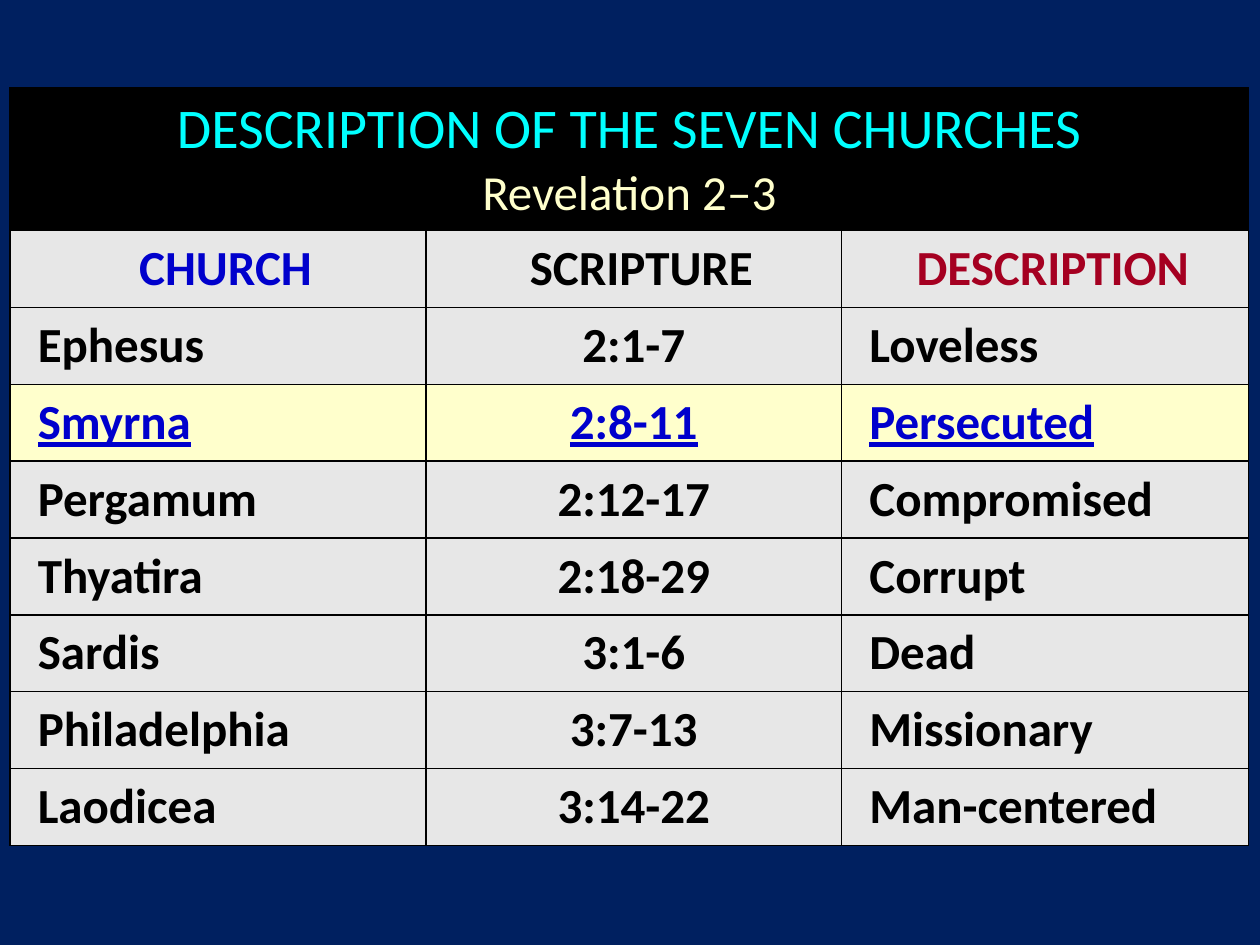
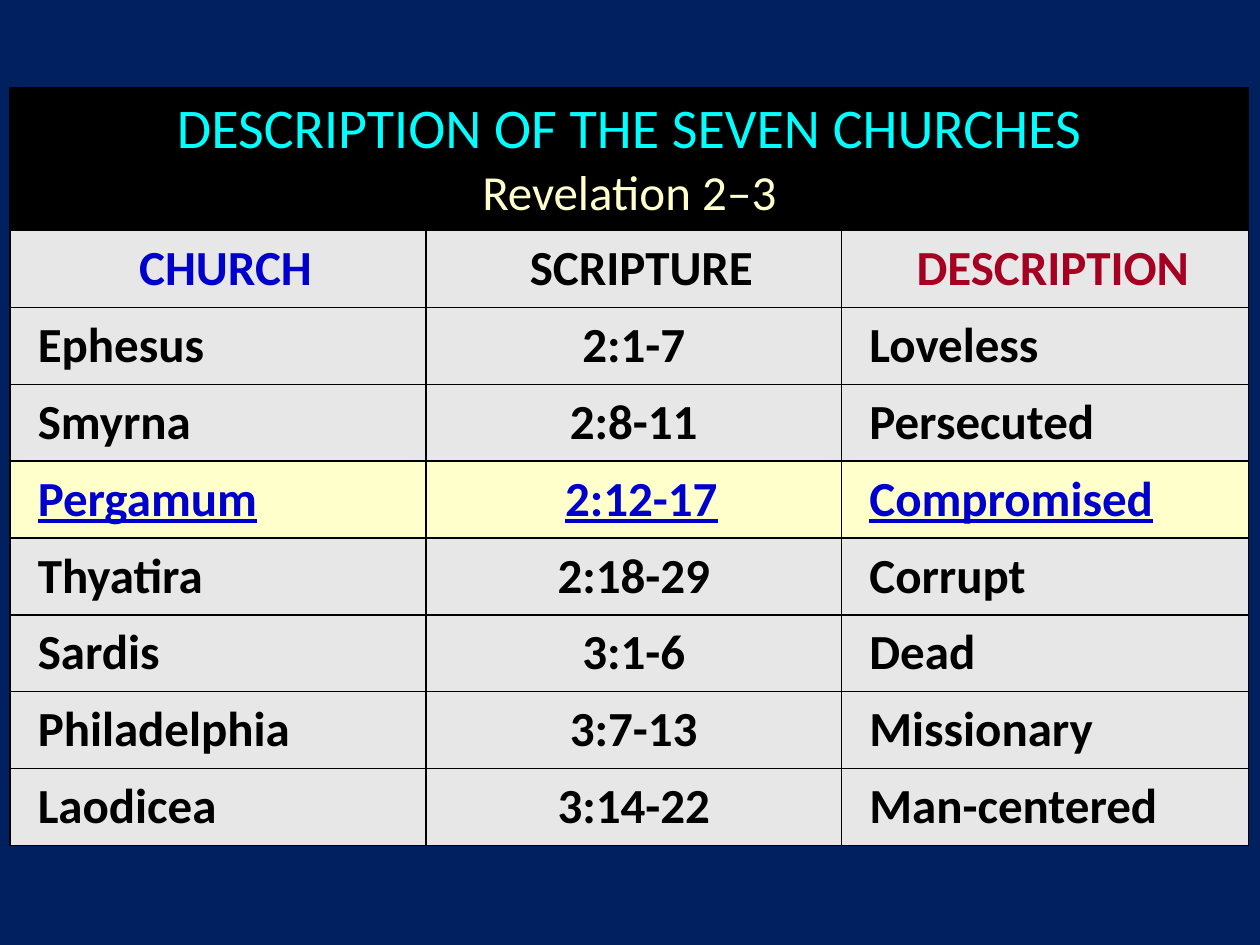
from lxml.etree import SubElement
from pptx import Presentation
from pptx.dml.color import RGBColor
from pptx.enum.text import MSO_ANCHOR, PP_ALIGN
from pptx.oxml.ns import qn
from pptx.util import Inches, Pt

COLORS = {
    "background": "002060",
    "black": "000000",
    "title": "00FFFF",
    "cream": "FFFFCC",
    "cell": "E7E7E7",
    "blue": "0000CC",
    "red": "A50021",
}
FONT = "Calibri"
BODY_SIZE = 28
INDENT = Inches(0.12)
TABLE_BOX = (0.08, 0.7, 9.83, 6.01)
COLUMN_WIDTHS = (3.3, 3.3, 3.23)
ROW_HEIGHT = 0.61
HEADINGS = (("CHURCH", "blue"), ("SCRIPTURE", "black"), ("DESCRIPTION", "red"))
CHURCHES = (
    ("Ephesus", "2:1-7", "Loveless"),
    ("Smyrna", "2:8-11", "Persecuted"),
    ("Pergamum", "2:12-17", "Compromised"),
    ("Thyatira", "2:18-29", "Corrupt"),
    ("Sardis", "3:1-6", "Dead"),
    ("Philadelphia", "3:7-13", "Missionary"),
    ("Laodicea", "3:14-22", "Man-centered"),
)


def rgb(color):
    return RGBColor.from_string(COLORS[color])


def add_run(paragraph, text, color, size=BODY_SIZE, bold=True, underline=False):
    run = paragraph.add_run()
    run.text = text
    font = run.font
    font.name, font.size = FONT, Pt(size)
    font.bold, font.underline = bold, underline
    font.color.rgb = rgb(color)


def format_cell(cell, fill, align, indent=0):
    """Set borders, fill and paragraph layout; return the paragraph."""
    properties = cell._tc.get_or_add_tcPr()
    for side in ("a:lnL", "a:lnR", "a:lnT", "a:lnB"):
        border = SubElement(properties, qn(side), w=str(Pt(1)))
        line_fill = SubElement(border, qn("a:solidFill"))
        SubElement(line_fill, qn("a:srgbClr"), val=COLORS["black"])
    cell.fill.solid()
    cell.fill.fore_color.rgb = rgb(fill)
    cell.vertical_anchor = MSO_ANCHOR.MIDDLE

    paragraph = cell.text_frame.paragraphs[0]
    paragraph.alignment = align
    layout = paragraph._p.get_or_add_pPr()
    layout.set("marL", str(indent))
    layout.set("indent", "0")
    spacing = SubElement(layout, qn("a:spcBef"))
    SubElement(spacing, qn("a:spcPct"), val="20000")
    return paragraph


def fill_title_row(table):
    for column in range(len(COLUMN_WIDTHS)):
        paragraph = format_cell(table.cell(0, column), "black", PP_ALIGN.CENTER)
        if column == 0:
            add_run(paragraph, "DESCRIPTION OF THE SEVEN CHURCHES", "title", 32, False)
            paragraph.add_line_break()
            add_run(paragraph, "Revelation 2‒3", "cream", bold=False)
    table.cell(0, 0).merge(table.cell(0, len(COLUMN_WIDTHS) - 1))


def fill_heading_row(table):
    for column, (heading, color) in enumerate(HEADINGS):
        paragraph = format_cell(table.cell(1, column), "cell", PP_ALIGN.CENTER, INDENT)
        add_run(paragraph, heading, color)


def fill_church_rows(table, current_church, indent_current_scripture):
    for row, church in enumerate(CHURCHES, start=2):
        current = church[0] == current_church
        fill, color = ("cream", "blue") if current else ("cell", "black")
        for column, text in enumerate(church):
            scripture = column == 1
            align = PP_ALIGN.CENTER if scripture else PP_ALIGN.LEFT
            indented = not scripture or (current and indent_current_scripture)
            paragraph = format_cell(table.cell(row, column), fill, align,
                                    INDENT if indented else 0)
            add_run(paragraph, text, color, underline=current)


def add_churches_slide(presentation, current_church, indent_current_scripture=False):
    slide = presentation.slides.add_slide(presentation.slide_layouts[6])
    slide.background.fill.solid()
    slide.background.fill.fore_color.rgb = rgb("background")

    # Table grid
    left, top, width, height = TABLE_BOX
    row_count = len(CHURCHES) + 2
    table = slide.shapes.add_table(
        row_count, len(COLUMN_WIDTHS),
        Inches(left), Inches(top), Inches(width), Inches(height)).table
    table.first_row = table.horz_banding = False
    for column, column_width in zip(table.columns, COLUMN_WIDTHS):
        column.width = Inches(column_width)
    for row in table.rows:
        row.height = Inches(ROW_HEIGHT)
    table.rows[0].height = Inches(height - ROW_HEIGHT * (row_count - 1))

    # Table content
    fill_title_row(table)
    fill_heading_row(table)
    fill_church_rows(table, current_church, indent_current_scripture)


def main():
    presentation = Presentation()
    presentation.slide_width = Inches(10)
    presentation.slide_height = Inches(7.5)
    add_churches_slide(presentation, "Smyrna")
    add_churches_slide(presentation, "Pergamum", indent_current_scripture=True)
    presentation.save("out.pptx")


if __name__ == "__main__":
    main()
